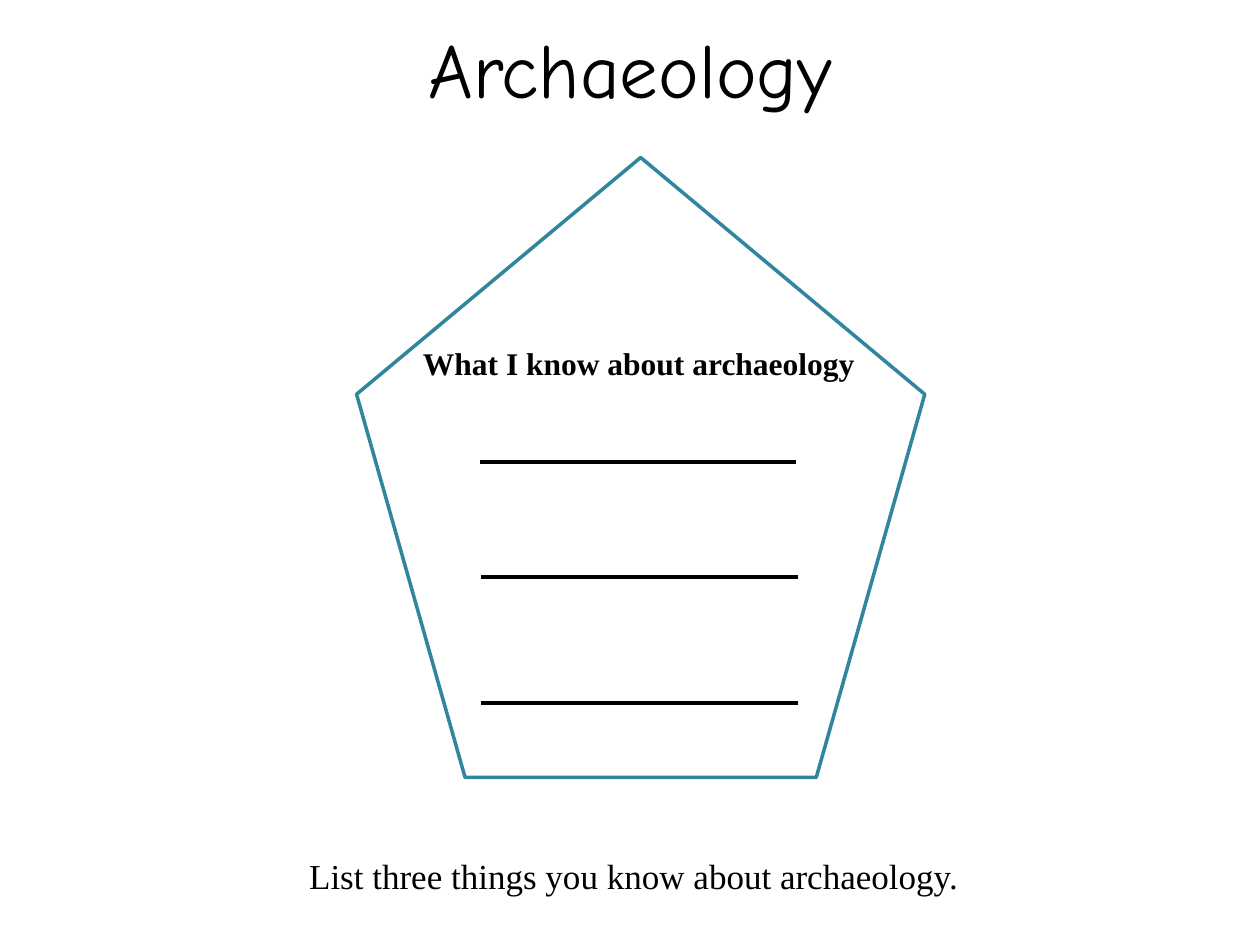
import pptx
import pptx.util
import pptx.dml.color
import pptx.enum.shapes
import pptx.enum.text
import pptx.oxml.ns
import lxml.etree

Pt = pptx.util.Pt
COLORS = {"text": "000000", "pentagon": "31859C"}
TITLE = {
    "text": "Archaeology",
    "box": (12.24, 5.76, 696.24, 66.24),
    "font": {"name": "Comic Neue", "size": Pt(44), "bold": False},
    "frame": {"word_wrap": True, "vertical_anchor": pptx.enum.text.MSO_ANCHOR.MIDDLE},
}
TEXT_BOXES = [
    {
        "text": "List three things you know about archaeology.",
        "box": (33.84, 484.56, 656.64, 31.68),
        "font": {"name": "Times New Roman", "size": Pt(20), "bold": False},
        "frame": {"word_wrap": True},
    },
    {
        "text": "What I know about archaeology",
        "box": (233.28, 192.96, 263.52, 28.8),
        "font": {"name": "Times New Roman", "size": Pt(18), "bold": True},
        "frame": {"word_wrap": False},
    },
]
PENTAGON = (203.76, 90, 324.72, 354.24)
ANSWER_LINES = [(274.32, 264.24), (275.04, 329.76), (275.04, 401.76)]
ANSWER_WIDTH = 180.72


def color(name):
    return pptx.dml.color.RGBColor.from_string(COLORS[name])


def set_values(target, values):
    for name, value in values.items():
        setattr(target, name, value)


def place(shape, box):
    set_values(shape, dict(zip(("left", "top", "width", "height"), map(Pt, box))))


def write(shape, content):
    frame = shape.text_frame
    frame.text = content["text"]
    set_values(frame, content["frame"])
    paragraph = frame.paragraphs[0]
    paragraph.alignment = pptx.enum.text.PP_ALIGN.CENTER
    font = paragraph.runs[0].font
    set_values(font, content["font"])
    font.color.rgb = color("text")


def main():
    """Build the archaeology worksheet slide."""
    presentation = pptx.Presentation()
    set_values(presentation, {"slide_width": Pt(720), "slide_height": Pt(540)})
    slide = presentation.slides.add_slide(presentation.slide_layouts[5])
    shapes = slide.shapes

    place(shapes.title, TITLE["box"])
    write(shapes.title, TITLE)

    pentagon = shapes.add_shape(
        pptx.enum.shapes.MSO_SHAPE.REGULAR_PENTAGON, *map(Pt, PENTAGON)
    )
    pentagon.shadow.inherit = False
    pentagon.fill.background()
    pentagon.line.color.rgb = color("pentagon")
    pentagon.line.width = Pt(2)

    for content in TEXT_BOXES:
        write(shapes.add_textbox(*map(Pt, content["box"])), content)

    for left, top in ANSWER_LINES:
        line = shapes.add_connector(
            pptx.enum.shapes.MSO_CONNECTOR.STRAIGHT,
            *map(Pt, (left, top, left + ANSWER_WIDTH, top)),
        )
        line.line.color.rgb = color("text")
        line.line.width = Pt(2.25)
        properties = line.element.find(pptx.oxml.ns.qn("p:spPr"))
        lxml.etree.SubElement(properties, pptx.oxml.ns.qn("a:effectLst"))

    presentation.save("out.pptx")


if __name__ == "__main__":
    main()
